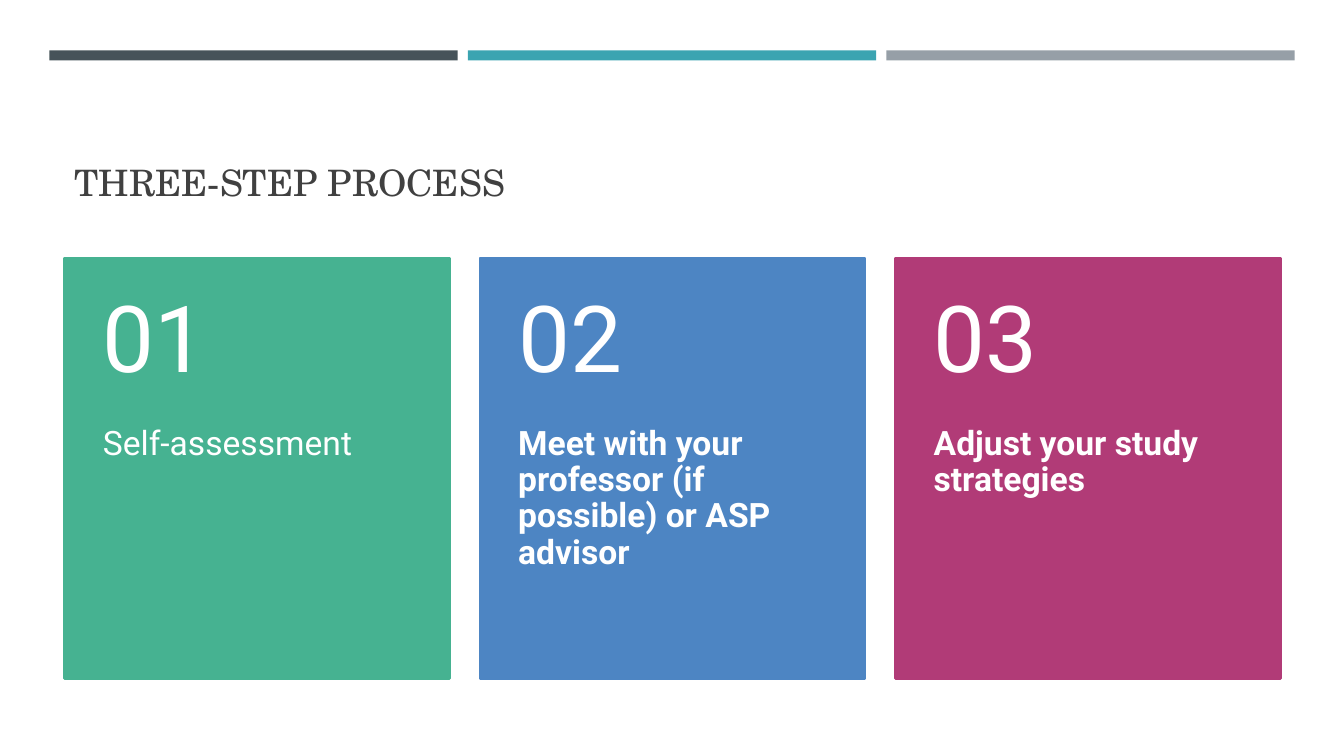
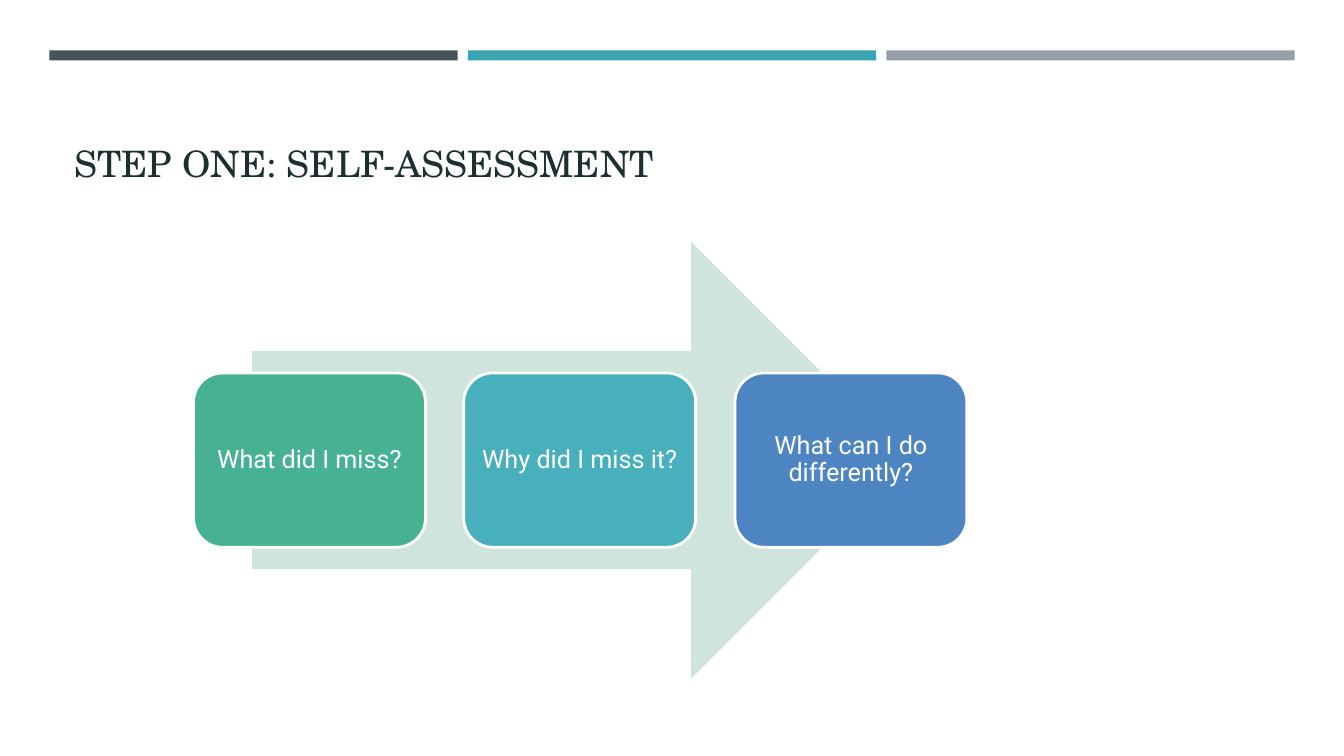
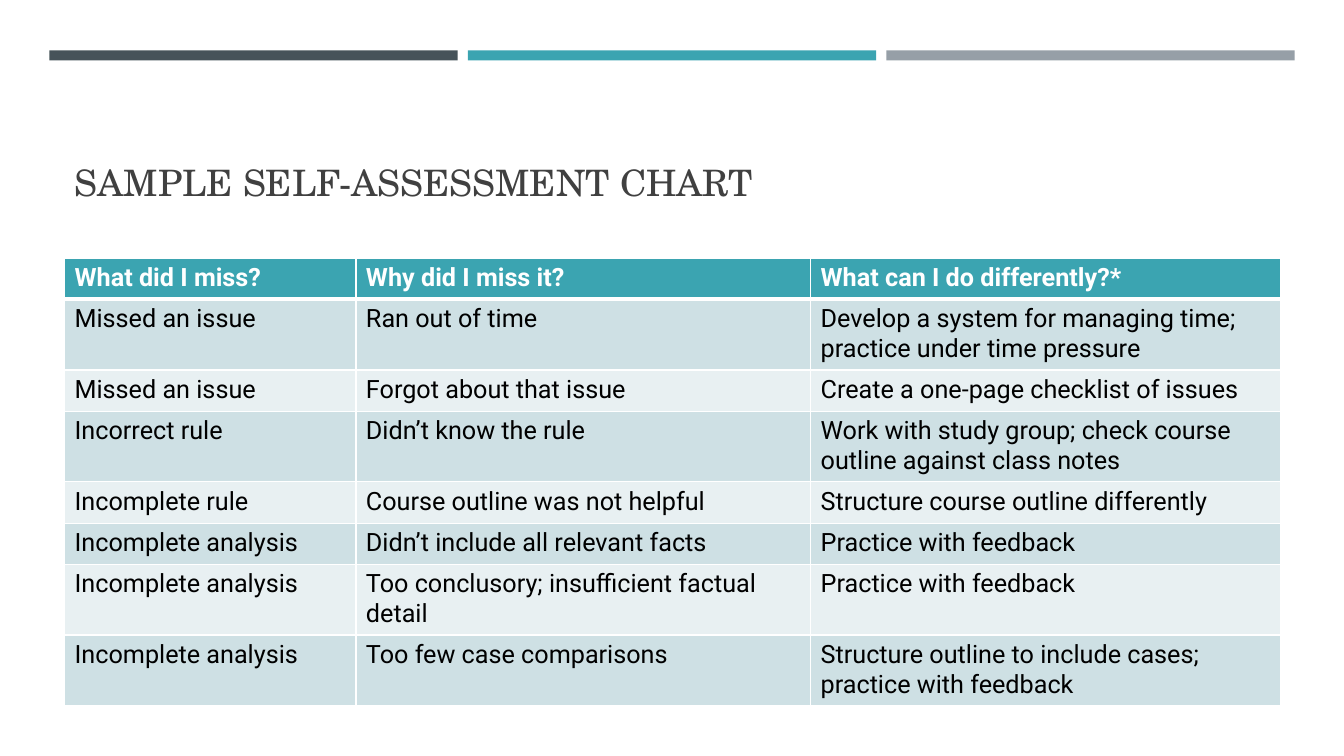
from lxml.etree import SubElement
from pptx import Presentation
from pptx.dml.color import RGBColor
from pptx.enum.shapes import MSO_SHAPE as Shape
from pptx.enum.text import MSO_ANCHOR as Anchor, PP_ALIGN as Align
from pptx.oxml.ns import qn
from pptx.util import Emu, Pt

EMU_PER_PX = 9144
LEFT, RIGHT, CONTENT_TOP = 64, 1270, 256
TITLE_FONT, BODY_FONT = "TeX Gyre Schola", "Roboto"
WHITE, BLACK, GREY, INK = "FFFFFF", "000000", "404040", "1C2F31"
SLATE, TEAL, SILVER = "465359", "3BA4B1", "969FA7"
GREEN, AQUA, BLUE, MAGENTA, MINT = "46B291", "48AFBC", "4D85C3", "B13B77", "CFE4DC"
ROW_FILLS = ["E8F0F2", "CEE0E4"]

STEPS = [
    ("01", "Self-assessment", GREEN, False),
    ("02", "Meet with your professor (if possible) or ASP advisor", BLUE, True),
    ("03", "Adjust your study strategies", MAGENTA, True),
]
QUESTIONS = [
    ("What did I miss?", GREEN),
    ("Why did I miss it?", AQUA),
    ("What can I do differently?", BLUE),
]
ASSESSMENT = [
    ("What did I miss?", "Why did I miss it?", "What can I do differently?*"),
    ("Missed an issue", "Ran out of time",
     "Develop a system for managing time; practice under time pressure"),
    ("Missed an issue", "Forgot about that issue", "Create a one-page checklist of issues"),
    ("Incorrect rule", "Didn’t know the rule",
     "Work with study group; check course outline against class notes"),
    ("Incomplete rule", "Course outline was not helpful", "Structure course outline differently"),
    ("Incomplete analysis", "Didn’t include all relevant facts", "Practice with feedback"),
    ("Incomplete analysis", "Too conclusory; insufficient factual detail",
     "Practice with feedback"),
    ("Incomplete analysis", "Too few case comparisons",
     "Structure outline to include cases; practice with feedback"),
]


def px(length):
    """Turn pixels into EMU."""
    return Emu(length * EMU_PER_PX)


def color(value):
    """Turn a hex string into a colour."""
    return RGBColor.from_string(value)


def spread(left, right, width, count):
    """Return the left edges of equal columns that fill a span."""
    return [left + i * (right - left - width) // (count - 1) for i in range(count)]


def write(frame, text, size, hue, font=BODY_FONT, bold=False, align=Align.LEFT, spacing=1.0):
    """Write one formatted paragraph into a text frame."""
    frame.word_wrap = True
    frame.text = text
    paragraph = frame.paragraphs[0]
    paragraph.alignment = align
    paragraph.line_spacing = spacing
    style = paragraph.runs[0].font
    style.name, style.size, style.bold = font, Pt(size), bold
    style.color.rgb = color(hue)


def set_insets(frame, left, top, right, bottom):
    """Set the four inner margins of a text frame."""
    frame.margin_left, frame.margin_top = px(left), px(top)
    frame.margin_right, frame.margin_bottom = px(right), px(bottom)


def add_label(slide, box, text, size, hue, insets=(10, 5, 10, 5), anchor=Anchor.TOP, **style):
    """Add a text box."""
    frame = slide.shapes.add_textbox(*map(px, box)).text_frame
    set_insets(frame, *insets)
    frame.vertical_anchor = anchor
    write(frame, text, size, hue, **style)


def add_block(slide, kind, box, fill, line=None, line_width=1.75):
    """Add a filled preset shape, outlined if a line colour is given."""
    block = slide.shapes.add_shape(kind, *map(px, box))
    block.shadow.inherit = False
    block.fill.solid()
    block.fill.fore_color.rgb = color(fill)
    if line:
        block.line.color.rgb = color(line)
        block.line.width = Pt(line_width)
    else:
        block.line.fill.background()
    return block


def add_titled_slide(deck, title, width=1206, height=130, hue=GREY):
    """Add a slide with the three bands and a title."""
    slide = deck.slides.add_slide(deck.slide_layouts[6])
    for left, band in zip(spread(49, 1284, 405, 3), (SLATE, TEAL, SILVER)):
        add_block(slide, Shape.RECTANGLE, (left, 50, 405, 10), band)
    add_label(slide, (LEFT, 77, width, height), title, 26, hue,
              anchor=Anchor.BOTTOM, font=TITLE_FONT)
    return slide


def add_step_card(slide, left, number, step, fill, bold):
    """Add a numbered step card."""
    width, number_height, step_height = 382, 167, 250
    step_top = CONTENT_TOP + number_height
    add_block(slide, Shape.RECTANGLE,
              (left, CONTENT_TOP, width, number_height + step_height), fill, fill)
    add_label(slide, (left, step_top, width, step_height), step, 24, WHITE,
              (38, 0, 38, 36), bold=bold, spacing=0.9)
    add_label(slide, (left, CONTENT_TOP, width, number_height), number, 66, WHITE,
              (38, 18, 38, 18), Anchor.MIDDLE, spacing=0.9)


def add_question(slide, left, question, fill):
    """Add a rounded box with a centred question."""
    box = add_block(slide, Shape.ROUNDED_RECTANGLE, (left, 370, 230, 173), fill, WHITE, 2)
    set_insets(box.text_frame, 7, 7, 7, 7)
    box.text_frame.vertical_anchor = Anchor.MIDDLE
    write(box.text_frame, question, 18, WHITE, align=Align.CENTER, spacing=0.9)


def set_borders(cell, top, bottom):
    """Draw white cell borders, with the given top and bottom widths in points."""
    properties = cell._tc.get_or_add_tcPr()
    for side, width in (("L", 1), ("R", 1), ("T", top), ("B", bottom)):
        border = SubElement(properties, qn(f"a:ln{side}"), w=str(Pt(width)))
        solid = SubElement(border, qn("a:solidFill"))
        SubElement(solid, qn("a:srgbClr"), val=WHITE)


def add_banded_table(slide, rows, widths, row_height):
    """Add a table with a header row and banded body rows."""
    table = slide.shapes.add_table(
        len(rows), len(widths), px(LEFT), px(CONTENT_TOP),
        px(sum(widths)), px(row_height * len(rows))).table
    for column, width in zip(table.columns, widths):
        column.width = px(width)
    for r, texts in enumerate(rows):
        header = r == 0
        for c, text in enumerate(texts):
            cell = table.cell(r, c)
            set_borders(cell, 3 if r == 1 else 1, 3 if header else 1)
            cell.fill.solid()
            cell.fill.fore_color.rgb = color(TEAL if header else ROW_FILLS[r % 2])
            write(cell.text_frame, text, 18, WHITE if header else BLACK, bold=header)


def main():
    """Build and save the three slides."""
    deck = Presentation()
    deck.slide_width, deck.slide_height = px(1333), px(750)

    process = add_titled_slide(deck, "THREE-STEP PROCESS")
    for left, step in zip(spread(LEFT, RIGHT, 382, len(STEPS)), STEPS):
        add_step_card(process, left, *step)

    step_one = add_titled_slide(deck, "STEP ONE: SELF-ASSESSMENT", 767, 111, INK)
    add_block(step_one, Shape.RIGHT_ARROW, (250, 240, 652, 433), MINT)
    for left, question in zip(spread(192, 959, 230, len(QUESTIONS)), QUESTIONS):
        add_question(step_one, left, *question)

    sample = add_titled_slide(deck, "SAMPLE SELF-ASSESSMENT CHART")
    add_banded_table(sample, ASSESSMENT, (289, 451, 466), 41)

    deck.save("out.pptx")


if __name__ == "__main__":
    main()
